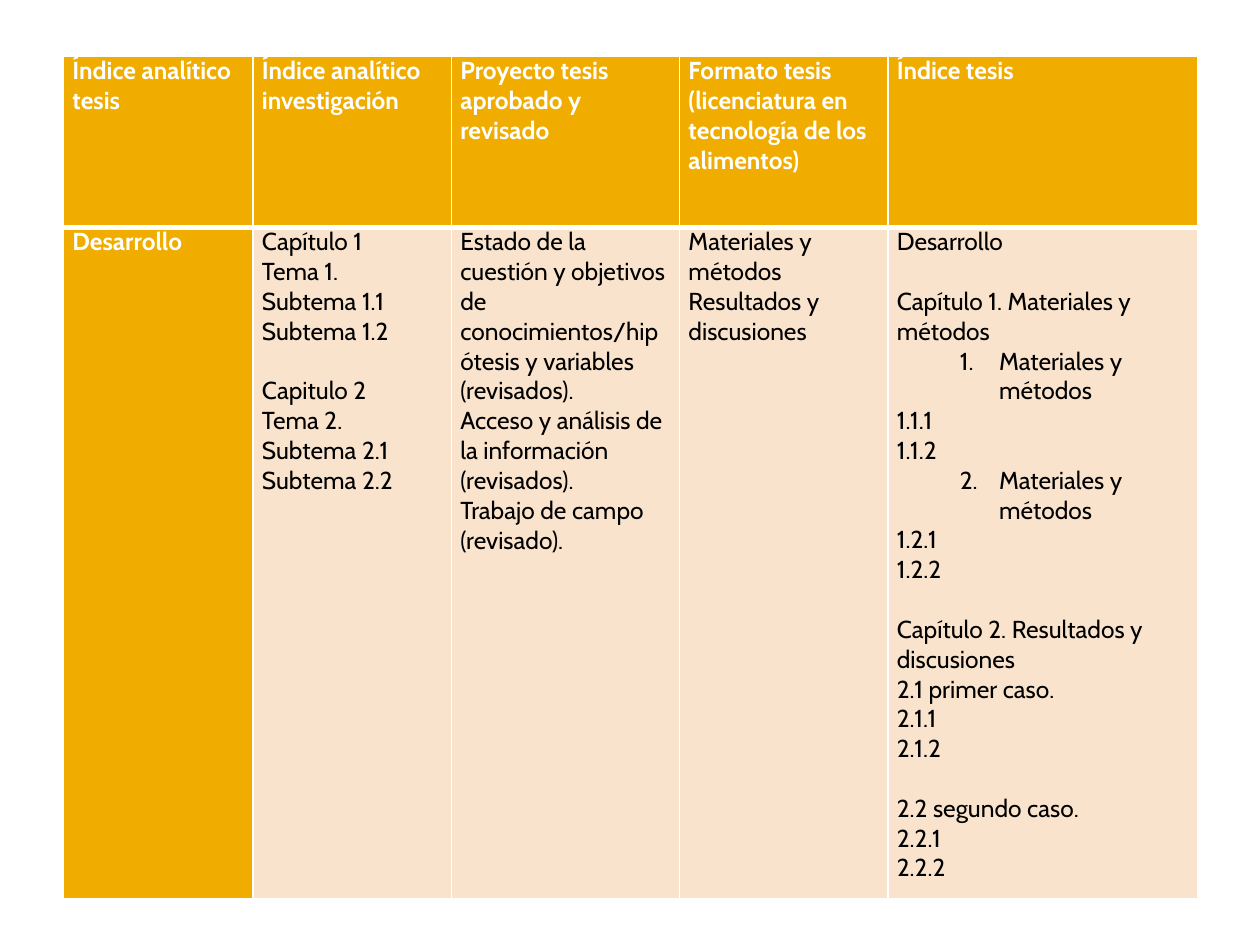
from dataclasses import dataclass

from lxml import etree
from pptx import Presentation
from pptx.dml.color import RGBColor
from pptx.oxml import ns
from pptx.util import Cm, Pt


@dataclass(frozen=True)
class Theme:
    font: str = "Cabin"
    size: int = 14
    line_pitch: int = 17
    heading_fill: str = "F0AD00"
    body_fill: str = "F9E3CC"
    heading_text: str = "FFFFFF"
    body_text: str = "000000"
    border: str = "FFFFFF"
    thin: int = 1
    thick: int = 3


THEME = Theme()
COLUMN_WIDTHS = (3.82, 4, 4.6, 4.2, 6.24)
ROW_HEIGHTS = (3.45, 13.53)

HEADINGS = (
    "Índice analítico tesis",
    "Índice analítico investigación",
    "Proyecto tesis aprobado y revisado",
    "Formato tesis (licenciatura en tecnología de los alimentos)",
    "Índice tesis",
)

# Each cell is a list of groups; one line of space separates the groups.
DEVELOPMENT = (
    [["Desarrollo"]],
    [
        ["Capítulo 1", "Tema 1.", "Subtema 1.1", "Subtema 1.2"],
        ["Capitulo 2", "Tema 2.", "Subtema 2.1", "Subtema 2.2"],
    ],
    [[
        "Estado de la cuestión y objetivos de conocimientos/hipótesis y variables (revisados).",
        "Acceso y análisis de la información (revisados).",
        "Trabajo de campo (revisado).",
    ]],
    [["Materiales y métodos", "Resultados y discusiones"]],
    [
        ["Desarrollo"],
        [
            "Capítulo 1. Materiales y métodos",
            (1, "Materiales y métodos"), "1.1.1", "1.1.2",
            (2, "Materiales y métodos"), "1.2.1", "1.2.2",
        ],
        ["Capítulo 2. Resultados y discusiones", "2.1 primer caso.", "2.1.1", "2.1.2"],
        ["2.2 segundo caso.", "2.2.1", "2.2.2"],
    ],
)


def number_paragraph(paragraph, number):
    paragraph.level = 1
    properties = paragraph._p.get_or_add_pPr()
    properties.set("marL", str(Cm(2.06)))
    properties.set("indent", str(Cm(-0.79)))
    etree.SubElement(properties, ns.qn("a:buFont"), typeface="+mj-lt")
    etree.SubElement(properties, ns.qn("a:buAutoNum"), type="arabicPeriod", startAt=str(number))


def write_groups(cell, groups, color, bold):
    frame = cell.text_frame
    frame.word_wrap = True
    for group_index, group in enumerate(groups):
        for line_index, line in enumerate(group):
            is_first = group_index == line_index == 0
            paragraph = frame.paragraphs[0] if is_first else frame.add_paragraph()
            number, wording = line if isinstance(line, tuple) else (None, line)
            paragraph.text = wording
            if group_index and not line_index:
                paragraph.space_before = Pt(THEME.line_pitch)
            if number:
                number_paragraph(paragraph, number)
            font = paragraph.runs[0].font
            font.name, font.size, font.bold = THEME.font, Pt(THEME.size), bold
            font.color.rgb = RGBColor.from_string(color)


def set_borders(cell, top, bottom):
    properties = cell._tc.get_or_add_tcPr()
    widths = {"lnL": THEME.thin, "lnR": THEME.thin, "lnT": top, "lnB": bottom}
    for position, (side, width) in enumerate(widths.items()):
        line = etree.Element(ns.qn(f"a:{side}"), w=str(Pt(width)))
        fill = etree.SubElement(line, ns.qn("a:solidFill"))
        etree.SubElement(fill, ns.qn("a:srgbClr"), val=THEME.border)
        properties.insert(position, line)


def fill_cell(cell, groups, is_heading):
    cell.margin_left = cell.margin_right = Cm(0.18)
    cell.margin_top = cell.margin_bottom = 0
    cell.fill.solid()
    fill = THEME.heading_fill if is_heading else THEME.body_fill
    cell.fill.fore_color.rgb = RGBColor.from_string(fill)
    color = THEME.heading_text if is_heading else THEME.body_text
    write_groups(cell, groups, color, is_heading)


def add_index_table(slide):
    rows = ([[[heading]] for heading in HEADINGS], DEVELOPMENT)
    table = slide.shapes.add_table(
        len(rows), len(HEADINGS), Cm(1.28), Cm(1.13),
        Cm(sum(COLUMN_WIDTHS)), Cm(sum(ROW_HEIGHTS)),
    ).table
    for column, width in zip(table.columns, COLUMN_WIDTHS):
        column.width = Cm(width)
    for row, height in zip(table.rows, ROW_HEIGHTS):
        row.height = Cm(height)
    for r, contents in enumerate(rows):
        top, bottom = (THEME.thick, THEME.thin) if r else (THEME.thin, THEME.thick)
        for c, groups in enumerate(contents):
            cell = table.cell(r, c)
            fill_cell(cell, groups, is_heading=r == 0 or c == 0)
            set_borders(cell, top, bottom)


def main():
    presentation = Presentation()
    presentation.slide_width, presentation.slide_height = Cm(25.4), Cm(19.05)
    slide = presentation.slides.add_slide(presentation.slide_layouts[6])
    add_index_table(slide)
    presentation.save("out.pptx")


if __name__ == "__main__":
    main()
